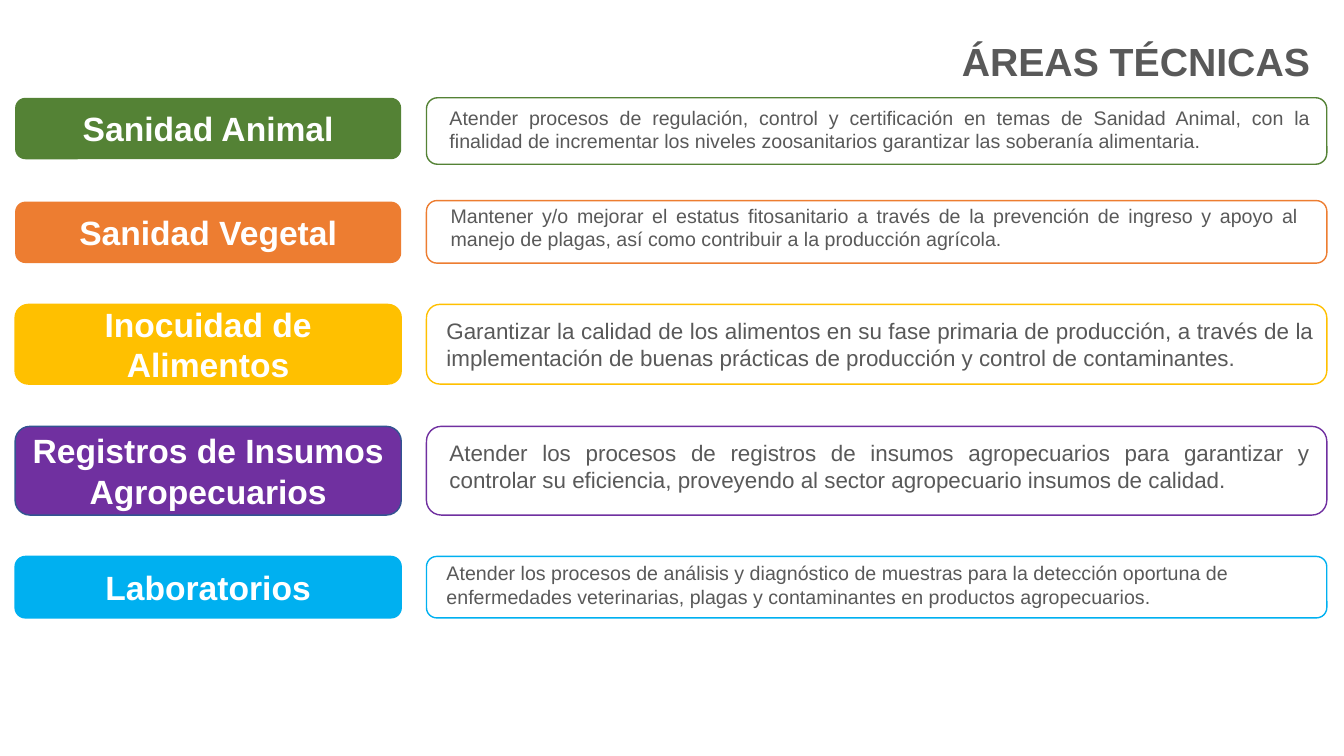
from dataclasses import dataclass
from typing import Optional

from pptx import Presentation
from pptx.dml.color import RGBColor
from pptx.enum.shapes import MSO_SHAPE
from pptx.enum.text import MSO_ANCHOR, PP_ALIGN
from pptx.util import Inches, Pt

ROUNDED = MSO_SHAPE.ROUNDED_RECTANGLE
MIDDLE, TOP = MSO_ANCHOR.MIDDLE, MSO_ANCHOR.TOP
LEFT, CENTER, RIGHT = PP_ALIGN.LEFT, PP_ALIGN.CENTER, PP_ALIGN.RIGHT
JUSTIFY = PP_ALIGN.JUSTIFY

FONT = "Arial"
GREY, WHITE = "595959", "FFFFFF"
LABEL_LEFT, LABEL_WIDTH = 0.15, 3.83
FRAME_LEFT, FRAME_WIDTH = 4.23, 8.93


@dataclass(frozen=True)
class Box:
    left: float
    top: float
    width: float
    height: float

    def lengths(self) -> tuple:
        return tuple(Inches(v) for v in (self.left, self.top, self.width, self.height))


@dataclass(frozen=True)
class Area:
    name: str
    color: str
    label_top: float
    label_height: float
    frame_top: float
    frame_height: float
    text_box: Box
    text: str
    size: int = 14
    align: PP_ALIGN = JUSTIFY
    label_line: Optional[str] = None


AREAS = [
    Area("Sanidad Animal", "548235", 0.97, 0.61, 0.97, 0.66, Box(4.36, 1, 8.74, 0.58),
         "Atender procesos de regulación, control y certificación en temas de Sanidad "
         "Animal, con la finalidad de incrementar los niveles zoosanitarios garantizar "
         "las soberanía alimentaria."),
    Area("Sanidad Vegetal", "ED7D31", 2, 0.61, 1.99, 0.62, Box(4.37, 1.97, 8.61, 0.57),
         "Mantener y/o mejorar el estatus fitosanitario a través de la prevención de "
         "ingreso y apoyo al manejo de plagas, así como contribuir a la producción "
         "agrícola."),
    Area("Inocuidad de Alimentos", "FFC000", 3.02, 0.79, 3.02, 0.79,
         Box(4.33, 3.1, 8.8, 0.64),
         "Garantizar la calidad de los alimentos en su fase primaria de producción, a "
         "través de la implementación de buenas prácticas de producción y control de "
         "contaminantes.", size=16, label_line="FFC000"),
    Area("Registros de Insumos Agropecuarios", "7030A0", 4.23, 0.88, 4.23, 0.88,
         Box(4.36, 4.31, 8.73, 0.64),
         "Atender los procesos de registros de insumos agropecuarios para garantizar y "
         "controlar su eficiencia, proveyendo al sector agropecuario insumos de "
         "calidad.", size=16, label_line="325491"),
    Area("Laboratorios", "00B0F0", 5.52, 0.61, 5.52, 0.61, Box(4.33, 5.52, 8.65, 0.57),
         "Atender los procesos de análisis y diagnóstico de muestras para la detección "
         "oportuna de enfermedades veterinarias, plagas y contaminantes en productos "
         "agropecuarios.", align=LEFT, label_line="00B0F0"),
]


def rgb(color: str) -> RGBColor:
    return RGBColor.from_string(color)


def write(shape, text: str, size: int, color: str, align: PP_ALIGN,
          bold: bool = False, anchor: MSO_ANCHOR = TOP) -> None:
    frame = shape.text_frame
    frame.word_wrap = True
    frame.vertical_anchor = anchor
    para = frame.paragraphs[0]
    para.text = text
    para.alignment = align
    font = para.runs[0].font
    font.name, font.size, font.bold = FONT, Pt(size), bold
    font.color.rgb = rgb(color)


def add_rounded(page, box: Box, fill: Optional[str], line: Optional[str]):
    shape = page.shapes.add_shape(ROUNDED, *box.lengths())
    shape.shadow.inherit = False
    if fill:
        shape.fill.solid()
        shape.fill.fore_color.rgb = rgb(fill)
    else:
        shape.fill.background()
    if line:
        shape.line.color.rgb = rgb(line)
        shape.line.width = Pt(1)
    else:
        shape.line.fill.background()
    return shape


def add_area(page, area: Area) -> None:
    # Coloured label
    label_box = Box(LABEL_LEFT, area.label_top, LABEL_WIDTH, area.label_height)
    label = add_rounded(page, label_box, area.color, area.label_line)
    write(label, area.name, 24, WHITE, CENTER, bold=True, anchor=MIDDLE)
    # Outlined frame with its description
    frame_box = Box(FRAME_LEFT, area.frame_top, FRAME_WIDTH, area.frame_height)
    add_rounded(page, frame_box, None, area.color)
    description = page.shapes.add_textbox(*area.text_box.lengths())
    write(description, area.text, area.size, GREY, area.align)


def main() -> None:
    deck = Presentation()
    deck.slide_width, deck.slide_height = Inches(13.33), Inches(7.5)
    page = deck.slides.add_slide(deck.slide_layouts[6])

    # Technical areas
    for area in AREAS:
        add_area(page, area)

    # Title
    title = page.shapes.add_textbox(*Box(2.23, 0.32, 10.86, 0.57).lengths())
    write(title, "ÁREAS TÉCNICAS", 28, GREY, RIGHT, bold=True)

    deck.save("out.pptx")


if __name__ == "__main__":
    main()
